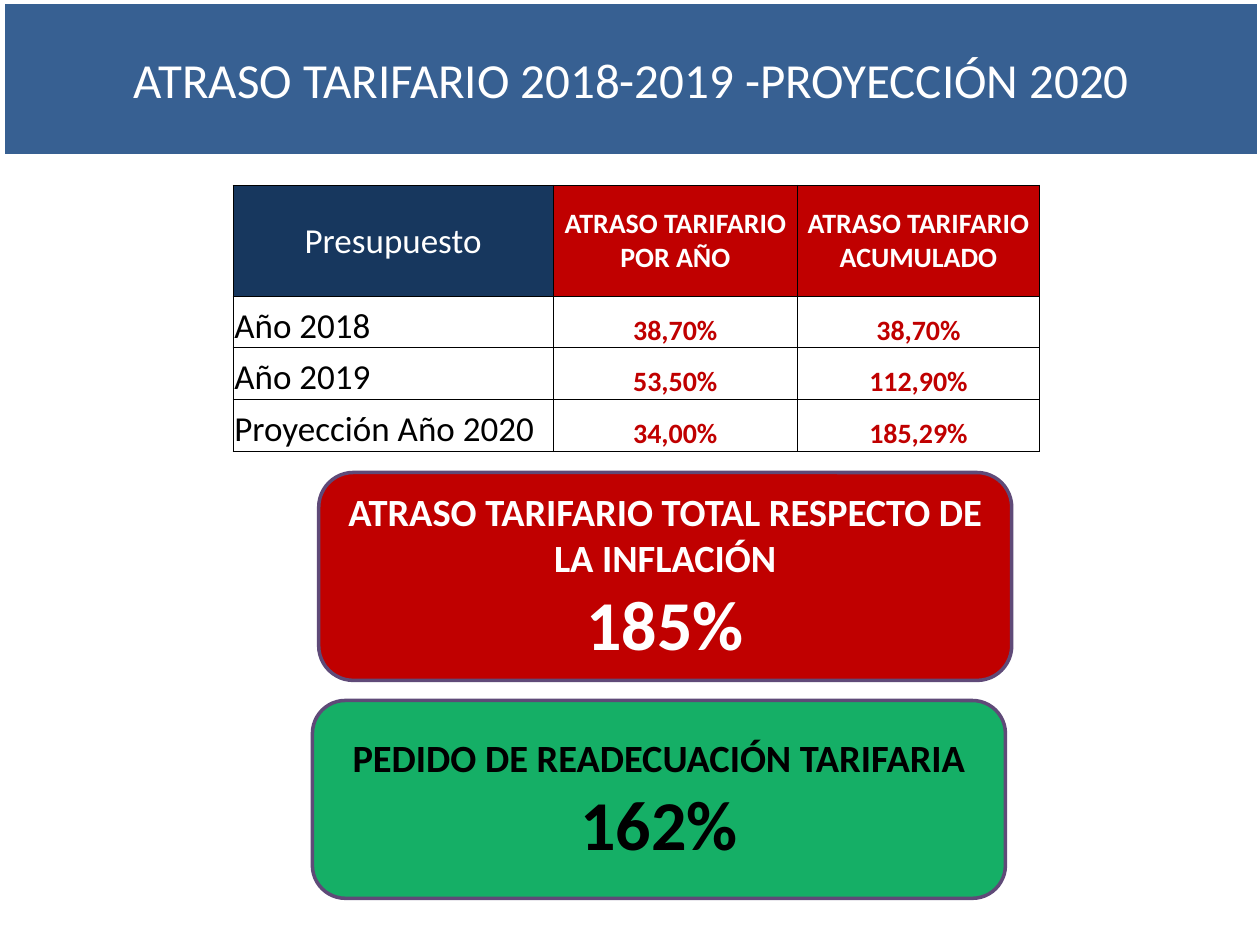
from enum import Enum

from lxml.etree import SubElement
from pptx import Presentation
from pptx.dml.color import RGBColor
from pptx.enum.shapes import MSO_SHAPE as Preset
from pptx.enum.text import MSO_ANCHOR as Anchor, PP_ALIGN as Align
from pptx.oxml.ns import qn
from pptx.util import Inches, Pt


class Theme(Enum):
    FONT = "Calibri"
    WHITE = "FFFFFF"
    BLACK = "000000"
    BLUE = "376092"
    NAVY = "17375E"
    RED = "C00000"
    GREEN = "15AF66"
    PURPLE = "5F4A78"
    TITLE_SIZE = 28
    LABEL_SIZE = 20
    VALUE_SIZE = 16
    MESSAGE_SIZE = 22
    FIGURE_SIZE = 40


def format_paragraph(paragraph, size, color, bold=False, alignment=Align.CENTER):
    paragraph.alignment = alignment
    for run in paragraph.runs:
        run.font.name = Theme.FONT.value
        run.font.size = Pt(size.value)
        run.font.bold = bold
        run.font.color.rgb = RGBColor.from_string(color.value)


def add_box(slide, preset, box, fill, line, line_width):
    shape = slide.shapes.add_shape(preset, *(Inches(length) for length in box))
    shape.shadow.inherit = False
    shape.fill.solid()
    shape.fill.fore_color.rgb = RGBColor.from_string(fill.value)
    shape.line.color.rgb = RGBColor.from_string(line.value)
    shape.line.width = Pt(line_width)
    shape.text_frame.vertical_anchor = Anchor.MIDDLE
    shape.text_frame.word_wrap = True
    return shape


presentation = Presentation()
presentation.slide_width = Inches(10)
presentation.slide_height = Inches(7.5)
slide = presentation.slides.add_slide(presentation.slide_layouts[6])

# Title band
title = add_box(slide, Preset.RECTANGLE, (0.01, 0, 10, 1.25), Theme.BLUE, Theme.WHITE, 4.5)
title.text_frame.text = "ATRASO TARIFARIO 2018-2019 -PROYECCIÓN 2020"
title.text_frame.word_wrap = False
format_paragraph(title.text_frame.paragraphs[0], Theme.TITLE_SIZE, Theme.WHITE)

# Result boxes
results = [
    ((2.53, 3.75, 5.5, 1.65), Theme.RED, Theme.WHITE,
     "ATRASO TARIFARIO TOTAL RESPECTO DE LA INFLACIÓN", "185%"),
    ((2.48, 5.56, 5.5, 1.57), Theme.GREEN, Theme.BLACK,
     "PEDIDO DE READECUACIÓN TARIFARIA", "162%"),
]
for box, fill, color, message, figure in results:
    result = add_box(slide, Preset.ROUNDED_RECTANGLE, box, fill, Theme.PURPLE, 2)
    result.text_frame.text = f"{message}\n{figure}"
    sizes = (Theme.MESSAGE_SIZE, Theme.FIGURE_SIZE)
    for paragraph, size in zip(result.text_frame.paragraphs, sizes):
        format_paragraph(paragraph, size, color, bold=True)

# Arrears table
rows = [
    ("Presupuesto", "ATRASO TARIFARIO POR AÑO", "ATRASO TARIFARIO ACUMULADO"),
    ("Año 2018", "38,70%", "38,70%"),
    ("Año 2019", "53,50%", "112,90%"),
    ("Proyección Año 2020", "34,00%", "185,29%"),
]
column_widths = (2.54, 1.94, 1.92)
row_heights = (0.88, 0.41, 0.41, 0.41)
table = slide.shapes.add_table(
    len(rows), len(column_widths), Inches(1.85), Inches(1.47),
    Inches(sum(column_widths)), Inches(sum(row_heights))).table
table.first_row = False
table.horz_banding = False
for column, width in zip(table.columns, column_widths):
    column.width = Inches(width)
for row, height in zip(table.rows, row_heights):
    row.height = Inches(height)

for row_index, texts in enumerate(rows):
    for column_index, text in enumerate(texts):
        is_header, is_label = row_index == 0, column_index == 0
        cell = table.cell(row_index, column_index)
        cell.text_frame.text = text
        cell.margin_left = cell.margin_right = cell.margin_top = Inches(0.01)
        cell.margin_bottom = 0
        cell.vertical_anchor = Anchor.MIDDLE if is_header else Anchor.BOTTOM

        accent = Theme.NAVY if is_label else Theme.RED
        text_color = Theme.BLACK if is_label else Theme.RED
        format_paragraph(
            cell.text_frame.paragraphs[0],
            Theme.LABEL_SIZE if is_label else Theme.VALUE_SIZE,
            Theme.WHITE if is_header else text_color,
            bold=not is_label,
            alignment=Align.LEFT if is_label and not is_header else Align.CENTER)

        # Borders come before the fill in the cell properties
        properties = cell._tc.get_or_add_tcPr()
        for side in ("a:lnL", "a:lnR", "a:lnT", "a:lnB"):
            border = SubElement(properties, qn(side), w=str(Pt(0.5)))
            border_fill = SubElement(border, qn("a:solidFill"))
            SubElement(border_fill, qn("a:srgbClr"), val=Theme.BLACK.value)
        if is_header:
            cell.fill.solid()
            cell.fill.fore_color.rgb = RGBColor.from_string(accent.value)
        else:
            cell.fill.background()

presentation.save("out.pptx")
